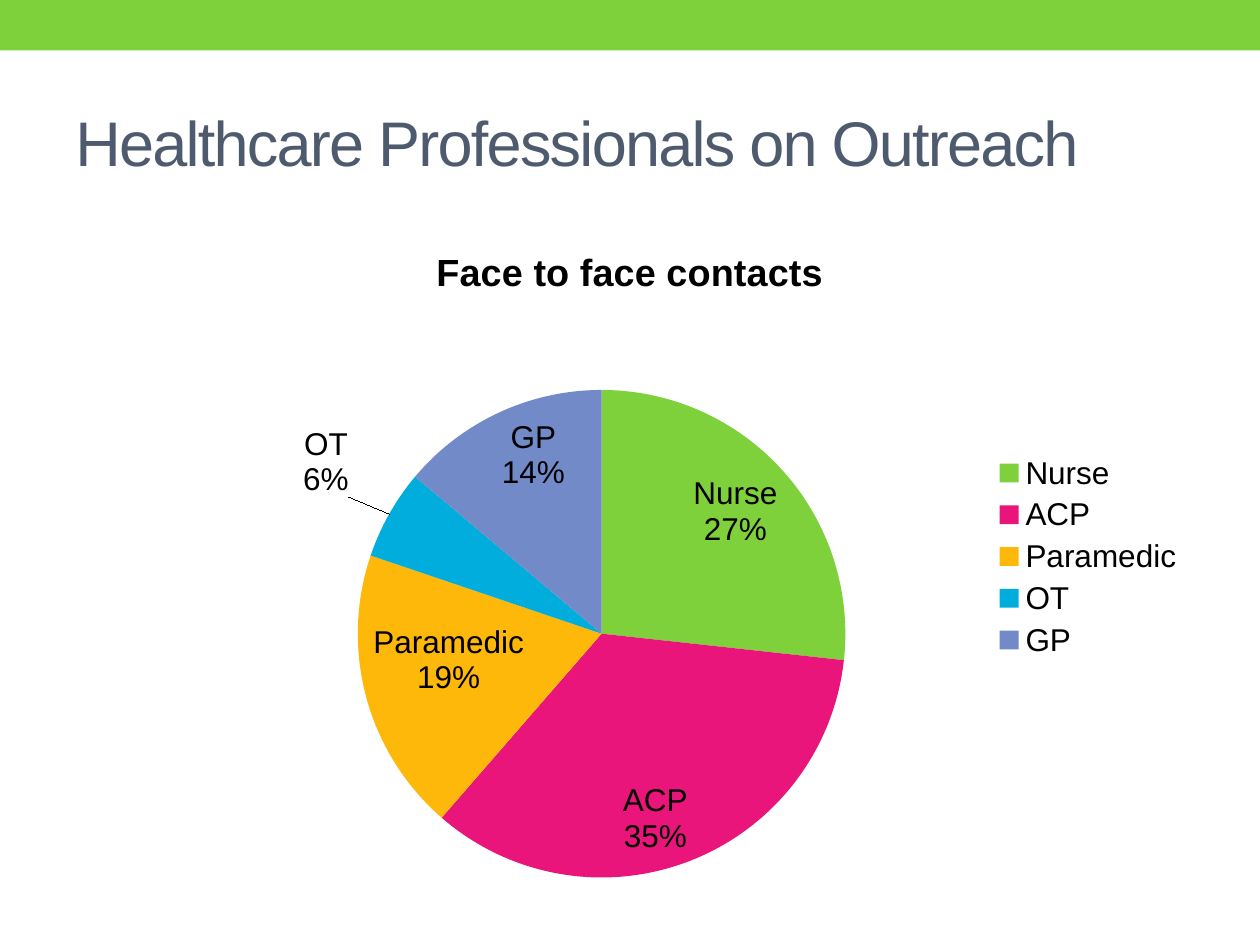
from lxml import etree
from pptx import Presentation
from pptx.chart.data import CategoryChartData
from pptx.dml.color import RGBColor
from pptx.enum.chart import XL_CHART_TYPE, XL_LABEL_POSITION, XL_LEGEND_POSITION
from pptx.enum.shapes import MSO_SHAPE
from pptx.enum.text import MSO_ANCHOR
from pptx.oxml.ns import qn
from pptx.util import Cm, Pt

PIE = XL_CHART_TYPE.PIE
INSIDE, OUTSIDE = XL_LABEL_POSITION.INSIDE_END, XL_LABEL_POSITION.OUTSIDE_END
RIGHT = XL_LEGEND_POSITION.RIGHT
MIDDLE = MSO_ANCHOR.MIDDLE
RECTANGLE = MSO_SHAPE.RECTANGLE

HEADING = "Healthcare Professionals on Outreach"
CHART_TITLE = "Face to face contacts"
CONTACTS = [
    ("Nurse", 27, "7FD13B"),
    ("ACP", 35, "EA157A"),
    ("Paramedic", 19, "FEB80A"),
    ("OT", 6, "00ADDC"),
    ("GP", 14, "738AC8"),
]
OUTSIDE_LABEL = "OT"
LABEL_SHIFT = {"x": -0.03, "y": -0.02}
PLOT_AREA = {"layoutTarget": "inner", "xMode": "edge", "yMode": "edge",
             "x": 0.26, "y": 0.25, "w": 0.43, "h": 0.73}
HEADING_FONT = {"name": "Arial", "size": Pt(36)}
CHART_FONT = {"name": "Arial", "size": Pt(18)}
TITLE_FONT = {"name": "Arial", "size": Pt(21.6), "bold": True}
LABEL_PARTS = {"show_category_name": True, "show_percentage": True, "show_value": False,
               "number_format": "0%", "number_format_is_linked": False, "position": INSIDE}


def colour(value):
    return RGBColor.from_string(value)


def apply(target, values):
    for name, value in values.items():
        setattr(target, name, value)


def style_font(font, values, value):
    apply(font, values)
    font.color.rgb = colour(value)


def make_layout(values):
    layout = etree.Element(qn("c:layout"))
    manual = etree.SubElement(layout, qn("c:manualLayout"))
    for name, value in values.items():
        etree.SubElement(manual, qn(f"c:{name}")).set("val", str(value))
    return layout


def set_layout(parent, values, index):
    for old in parent.findall(qn("c:layout")):
        parent.remove(old)
    parent.insert(index, make_layout(values))


def add_separator(labels):
    separator = etree.Element(qn("c:separator"))
    separator.text = "\n"
    last_flag = labels.find(qn("c:showBubbleSize"))
    if last_flag is None:
        last_flag = labels.find(qn("c:showPercent"))
    last_flag.addnext(separator)


def add_heading(page):
    box = page.shapes.add_textbox(Cm(1.27), Cm(1.47), Cm(22.86), Cm(2.74))
    frame = box.text_frame
    apply(frame, {"word_wrap": True, "vertical_anchor": MIDDLE})
    span = frame.paragraphs[0].add_run()
    span.text = HEADING
    style_font(span.font, HEADING_FONT, "4E5B6F")
    span.font._element.set("spc", "-100")


def add_pie(page):
    names, values, fills = zip(*CONTACTS)
    data = CategoryChartData()
    data.categories = names
    data.add_series(CHART_TITLE, values)
    chart = page.shapes.add_chart(PIE, Cm(1.27), Cm(4.45), Cm(22.86), Cm(13.54), data).chart
    style_font(chart.font, CHART_FONT, "000000")

    chart.has_title = True
    frame = chart.chart_title.text_frame
    frame.text = CHART_TITLE
    style_font(frame.paragraphs[0].runs[0].font, TITLE_FONT, "000000")
    chart.chart_title.include_in_layout = False

    chart.has_legend = True
    apply(chart.legend, {"position": RIGHT, "include_in_layout": False})

    plot = chart.plots[0]
    plot.vary_by_categories = True
    series = plot.series[0]
    for index, value in enumerate(fills):
        fill = series.points[index].format.fill
        fill.solid()
        fill.fore_color.rgb = colour(value)

    labels = series.data_labels
    apply(labels, LABEL_PARTS)
    style_font(labels.font, CHART_FONT, "000000")
    add_separator(labels._element)
    leader = labels._element.find(qn("c:showLeaderLines"))
    if leader is None:
        leader = etree.SubElement(labels._element, qn("c:showLeaderLines"))
    leader.set("val", "1")

    series.points[names.index(OUTSIDE_LABEL)].data_label.position = OUTSIDE
    label = labels._element.find(qn("c:dLbl"))
    for flag, value in {"showVal": 0, "showCatName": 1, "showPercent": 1, "showLegendKey": 0}.items():
        label.find(qn(f"c:{flag}")).set("val", str(value))
    add_separator(label)
    set_layout(label, LABEL_SHIFT, 1)
    set_layout(chart._chartSpace.find(".//" + qn("c:plotArea")), PLOT_AREA, 0)


def main():
    deck = Presentation()
    apply(deck, {"slide_width": Cm(25.4), "slide_height": Cm(19.05)})
    page = deck.slides.add_slide(deck.slide_layouts[6])
    band = page.shapes.add_shape(RECTANGLE, 0, 0, deck.slide_width, Cm(1.02))
    band.shadow.inherit = False
    band.fill.solid()
    band.fill.fore_color.rgb = colour("7FD13B")
    band.line.fill.background()
    add_heading(page)
    add_pie(page)
    deck.save("out.pptx")


if __name__ == "__main__":
    main()
